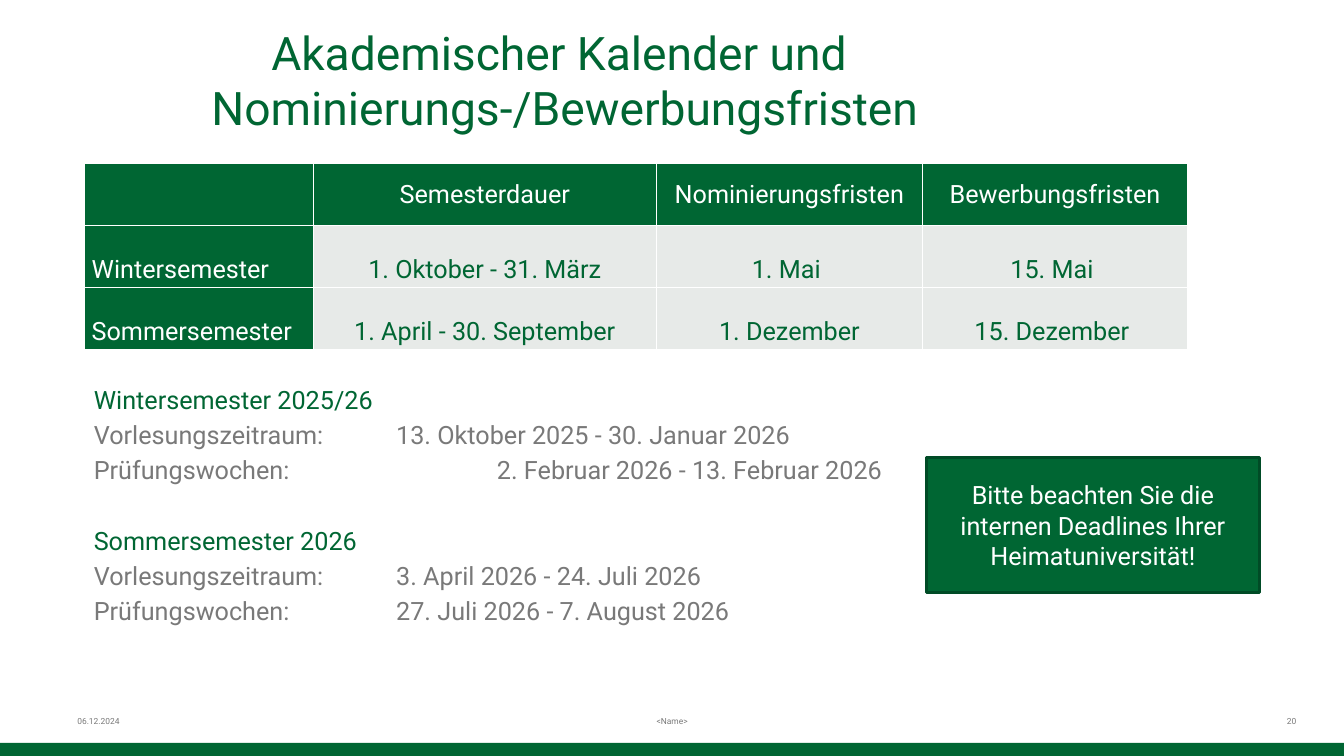
"""Build the slide with the academic calendar and application deadlines."""
from lxml import etree
from pptx import Presentation, util as u
from pptx.dml.color import RGBColor
from pptx.enum import shapes, text
from pptx.oxml.ns import qn

FONT = "Roboto"
COLORS = {"green": "006633", "edge": "004B26", "gray": "797979",
          "pale": "E7EAE8", "white": "FFFFFF"}
A = text.PP_ALIGN
V = text.MSO_ANCHOR

TITLE = "Akademischer Kalender und \vNominierungs-/Bewerbungsfristen"
DEADLINES = [
    ["", "Semesterdauer", "Nominierungsfristen", "Bewerbungsfristen"],
    ["Wintersemester", "1. Oktober - 31. März", "1. Mai ", "15. Mai "],
    ["Sommersemester", "1. April - 30. September", "1. Dezember", "15. Dezember "],
]
COL_WIDTHS = [5.77, 8.64, 6.71, 6.68]
ROW_HEIGHT = 1.56
TAB_SIZE = 2.54
SEMESTERS = [
    ("Wintersemester 2025/26", [
        "Vorlesungszeitraum: \t13. Oktober 2025 - 30. Januar 2026",
        "Prüfungswochen: \t\t2. Februar 2026 - 13. Februar 2026"]),
    ("Sommersemester 2026", [
        "Vorlesungszeitraum: \t3. April 2026 - 24. Juli 2026",
        "Prüfungswochen:\t\t27. Juli 2026 - 7. August 2026"]),
]
NOTICE = "Bitte beachten Sie die internen Deadlines Ihrer Heimatuniversität!"
FOOTERS = [("06.12.2024", 1.7, 7.9, A.LEFT, 0.25),
           ("<Name>", 11.58, 10.72, A.CENTER, 0.18),
           ("20", 24.77, 7.9, A.RIGHT, 0)]


def rgb(name):
    return RGBColor.from_string(COLORS[name])


def style(p, size, color, align=A.LEFT):
    p.alignment = align
    for r in p.runs:
        f = r.font
        f.name, f.size, f.bold = FONT, u.Pt(size), False
        f.color.rgb = rgb(color)


def place(sp, left, top, width, height):
    sp.left, sp.top, sp.width, sp.height = map(u.Cm, (left, top, width, height))


def add_rect(s, box, line=None):
    sp = s.shapes.add_shape(shapes.MSO_SHAPE.RECTANGLE, *map(u.Cm, box))
    sp.shadow.inherit = False
    sp.fill.solid()
    sp.fill.fore_color.rgb = rgb("green")
    if line:
        sp.line.color.rgb = rgb(line)
        sp.line.width = u.Pt(2)
    else:
        sp.line.fill.background()
    return sp


def add_borders(cell):
    tc_pr = cell._tc.get_or_add_tcPr()
    for side in ("lnL", "lnR", "lnT", "lnB"):
        ln = etree.SubElement(tc_pr, qn("a:" + side), w=str(u.Pt(1)))
        fill = etree.SubElement(ln, qn("a:solidFill"))
        etree.SubElement(fill, qn("a:srgbClr"), val=COLORS["white"])


def add_footer(s):
    add_rect(s, (0, 18.72, 33.87, 0.33))
    for label, left, width, align, right_inset in FOOTERS:
        tf = s.shapes.add_textbox(*map(u.Cm, (left, 17.65, width, 1.02))).text_frame
        tf.word_wrap = True
        tf.vertical_anchor = V.MIDDLE
        tf.margin_right = u.Cm(right_inset)
        if align == A.CENTER:
            tf.margin_left = u.Cm(right_inset)
        tf.text = label
        style(tf.paragraphs[0], 6, "gray", align)


def fill_title(sp):
    place(sp, 0.74, 0.61, 27, 3.18)
    tf = sp.text_frame
    tf.auto_size = text.MSO_AUTO_SIZE.NONE
    tf.vertical_anchor = V.TOP
    tf.margin_top = 0
    tf.text = TITLE
    style(tf.paragraphs[0], 33, "green", A.CENTER)


def fill_body(sp):
    place(sp, 2.11, 9.55, 30.96, 7.65)
    tf = sp.text_frame
    tf.auto_size = text.MSO_AUTO_SIZE.NONE
    lines = []
    for i, (semester, periods) in enumerate(SEMESTERS):
        lines.append((semester, "green", 28.7 if i else 0))
        lines += [(period, "gray", 3.6) for period in periods]
    for i, (line, color, before) in enumerate(lines):
        p = tf.add_paragraph() if i else tf.paragraphs[0]
        p.text = line
        p_pr = p._p.get_or_add_pPr()
        p_pr.set("marL", "0")
        p_pr.set("indent", "0")
        p_pr.set("defTabSz", str(u.Cm(TAB_SIZE)))
        etree.SubElement(p_pr, qn("a:buNone"))
        p.space_before = u.Pt(before)
        style(p, 18, color)


def add_deadlines(s):
    n_rows, n_cols = len(DEADLINES), len(COL_WIDTHS)
    box = (2.13, 4.13, sum(COL_WIDTHS), ROW_HEIGHT * n_rows)
    table = s.shapes.add_table(n_rows, n_cols, *map(u.Cm, box)).table
    for column, width in zip(table.columns, COL_WIDTHS):
        column.width = u.Cm(width)
    for i, values in enumerate(DEADLINES):
        table.rows[i].height = u.Cm(ROW_HEIGHT)
        for j, value in enumerate(values):
            cell = table.cell(i, j)
            heading = i == 0 or j == 0
            add_borders(cell)
            cell.fill.solid()
            cell.fill.fore_color.rgb = rgb("green" if heading else "pale")
            cell.margin_left = cell.margin_right = u.Cm(0.18)
            cell.margin_top = 0
            cell.margin_bottom = u.Cm(0.07 if i else 0)
            cell.vertical_anchor = V.BOTTOM if i else V.MIDDLE
            cell.text = value
            style(cell.text_frame.paragraphs[0], 18,
                  "white" if heading else "green", A.CENTER if j else A.LEFT)


def add_notice(s):
    tf = add_rect(s, (23.34, 11.53, 8.41, 3.4), "edge").text_frame
    tf.word_wrap = True
    tf.vertical_anchor = V.MIDDLE
    tf.text = NOTICE
    style(tf.paragraphs[0], 18, "white", A.CENTER)


def main():
    prs = Presentation()
    prs.slide_width, prs.slide_height = u.Cm(33.87), u.Cm(19.05)
    s = prs.slides.add_slide(prs.slide_layouts[1])
    add_footer(s)
    fill_title(s.shapes.title)
    fill_body(s.placeholders[1])
    add_deadlines(s)
    add_notice(s)
    prs.save("out.pptx")


if __name__ == "__main__":
    main()
